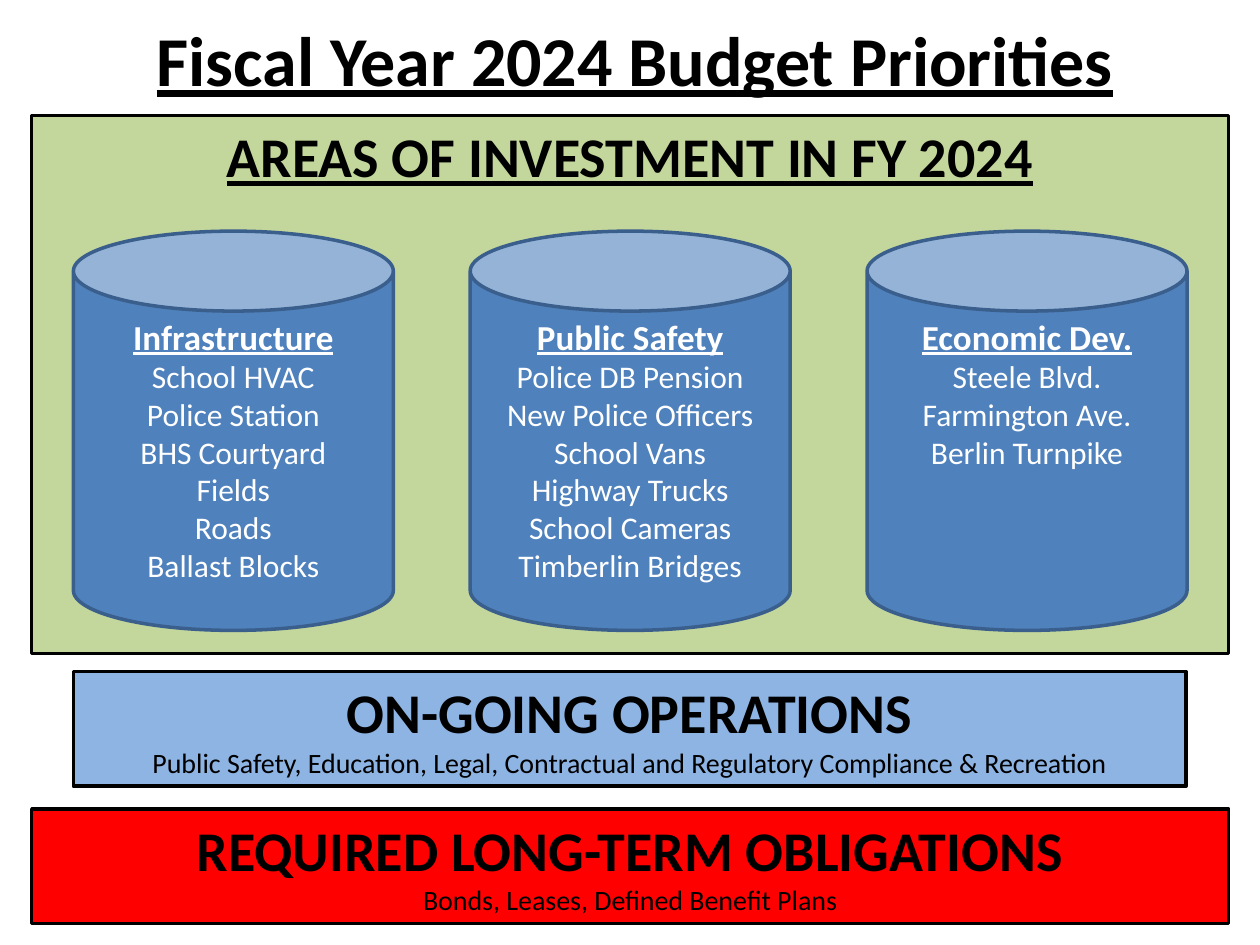
from dataclasses import dataclass

from pptx import Presentation
from pptx.dml.color import RGBColor
from pptx.enum.shapes import MSO_SHAPE
from pptx.enum.text import MSO_ANCHOR, MSO_AUTO_SIZE, PP_ALIGN
from pptx.util import Cm, Pt

RECTANGLE, CAN = MSO_SHAPE.RECTANGLE, MSO_SHAPE.CAN
TOP, CENTER, NO_FIT = MSO_ANCHOR.TOP, PP_ALIGN.CENTER, MSO_AUTO_SIZE.NONE
FONT, BLACK, WHITE = "Calibri", "000000", "FFFFFF"


@dataclass
class Line:
    text: str
    size: int
    bold: bool = False
    underline: bool = False


@dataclass
class Band:
    left: float
    top: float
    width: float
    height: float
    fill: str
    lines: list[Line]


@dataclass
class Pillar:
    heading: str
    items: list[str]


# Content, with lengths in centimetres
BANDS = [
    Band(0.64, 16.31, 24.13, 2.31, "FF0000", [
        Line("REQUIRED LONG-TERM OBLIGATIONS", 32, bold=True),
        Line("Bonds, Leases, Defined Benefit Plans", 16)]),
    Band(1.48, 13.54, 22.43, 2.31, "8EB4E3", [
        Line("ON-GOING OPERATIONS", 32, bold=True),
        Line("Public Safety, Education, Legal, Contractual and Regulatory "
             "Compliance & Recreation", 16)]),
    Band(0.64, 2.33, 24.13, 10.85, "C3D69B", [
        Line("AREAS OF INVESTMENT IN FY 2024", 32, bold=True, underline=True)]),
]
PILLARS = [
    Pillar("Infrastructure", ["School HVAC", "Police Station", "BHS Courtyard",
                              "Fields", "Roads", "Ballast Blocks"]),
    Pillar("Public Safety", ["Police DB Pension", "New Police Officers", "School Vans",
                             "Highway Trucks", "School Cameras", "Timberlin Bridges"]),
    Pillar("Economic Dev.", ["Steele Blvd.", "Farmington Ave.", "Berlin Turnpike"]),
]
PILLAR_LEFT, PILLAR_PITCH = 1.48, 8.0
PILLAR_TOP, PILLAR_WIDTH, PILLAR_HEIGHT = 4.66, 6.45, 8.05


def color(hex_code: str) -> RGBColor:
    return RGBColor.from_string(hex_code)


def write_lines(frame, lines: list[Line], text_color: str) -> None:
    frame.word_wrap = True
    frame.auto_size = NO_FIT
    frame.vertical_anchor = TOP
    for index, line in enumerate(lines):
        paragraph = frame.add_paragraph() if index else frame.paragraphs[0]
        paragraph.text = line.text
        paragraph.alignment = CENTER
        font = paragraph.font
        font.name, font.size = FONT, Pt(line.size)
        font.bold, font.underline = line.bold, line.underline
        font.color.rgb = color(text_color)


def add_block(slide, preset, band: Band, outline: str, text_color: str):
    block = slide.shapes.add_shape(preset, Cm(band.left), Cm(band.top),
                                   Cm(band.width), Cm(band.height))
    block.shadow.inherit = False
    block.fill.solid()
    block.fill.fore_color.rgb = color(band.fill)
    block.line.color.rgb = color(outline)
    block.line.width = Pt(2)
    write_lines(block.text_frame, band.lines, text_color)
    return block


def add_pillar(slide, pillar: Pillar, left: float) -> None:
    lines = [Line(pillar.heading, 20, bold=True, underline=True)]
    lines += [Line(item, 18) for item in pillar.items]
    body = Band(left, PILLAR_TOP, PILLAR_WIDTH, PILLAR_HEIGHT, "4F81BD", lines)
    can = add_block(slide, CAN, body, "3A5F8C", WHITE)
    can.text_frame.margin_top = Cm(0.08)


def main() -> None:
    presentation = Presentation()
    presentation.slide_width, presentation.slide_height = Cm(25.4), Cm(19.05)
    slide = presentation.slides.add_slide(presentation.slide_layouts[5])

    # Title
    title = slide.shapes.title
    title.left, title.top, title.width, title.height = Cm(2), Cm(0.2), Cm(21.6), Cm(1.96)
    write_lines(title.text_frame, [Line("Fiscal Year 2024 Budget Priorities", 40,
                                        bold=True, underline=True)], BLACK)

    # Obligations, operations and investment bands
    for band in BANDS:
        add_block(slide, RECTANGLE, band, BLACK, BLACK)

    # Investment areas
    for index, pillar in enumerate(PILLARS):
        add_pillar(slide, pillar, PILLAR_LEFT + index * PILLAR_PITCH)

    presentation.save("out.pptx")


if __name__ == "__main__":
    main()
